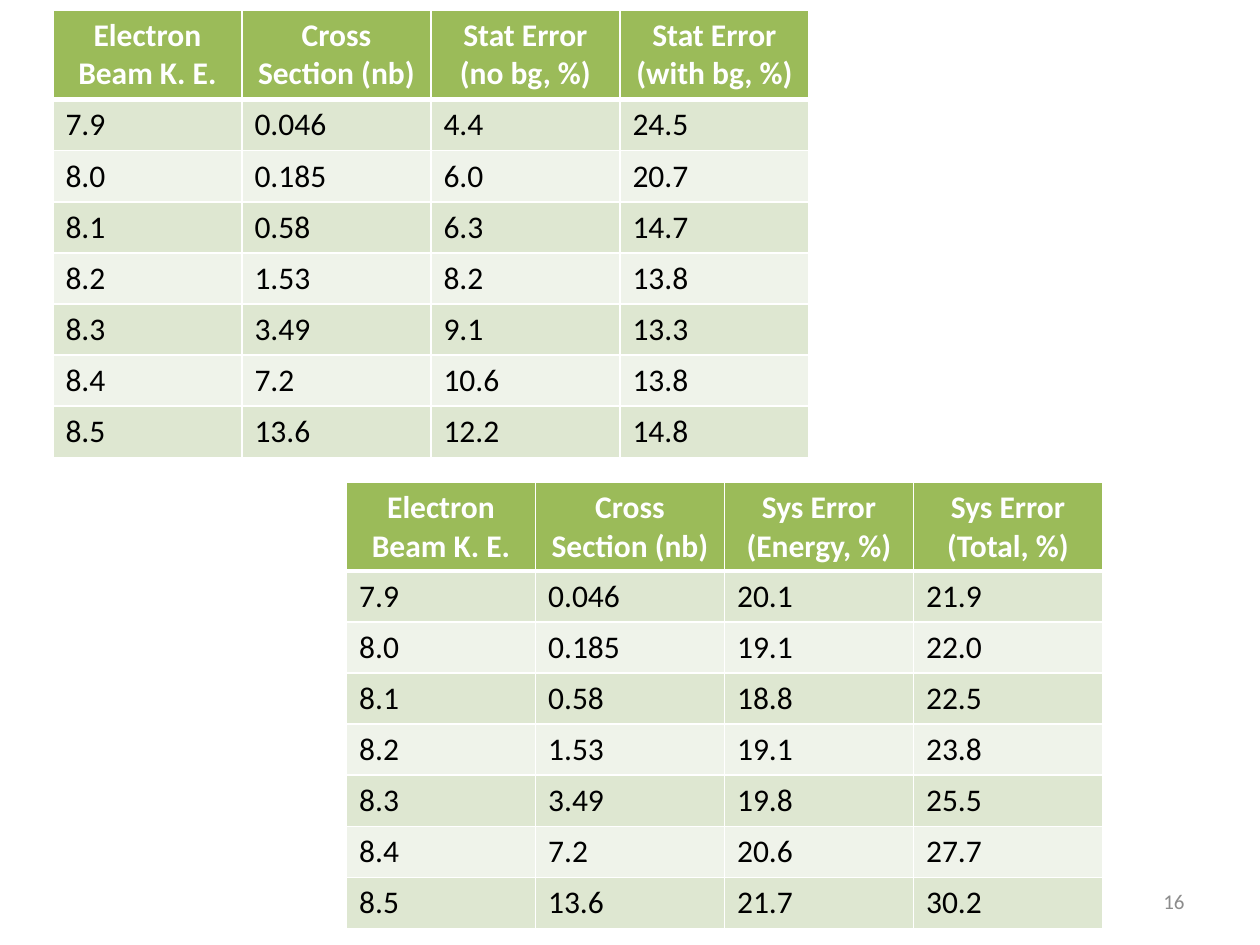
from dataclasses import dataclass

from lxml.etree import SubElement
from pptx import Presentation
from pptx.dml.color import RGBColor
from pptx.enum.text import MSO_ANCHOR, PP_ALIGN
from pptx.oxml.ns import qn
from pptx.util import Inches, Pt


@dataclass(frozen=True)
class Theme:
    font: str = "Calibri"
    table_size: int = 18
    number_size: int = 12
    header: str = "9BBB59"
    bands: tuple = ("DEE7D1", "EFF3EA")
    white: str = "FFFFFF"
    black: str = "000000"
    grey: str = "8C8C8C"
    grid_line: int = 1
    header_line: int = 3


THEME = Theme()
HEADER_HEIGHT = Inches(0.7)

ENERGIES = ["7.9", "8.0", "8.1", "8.2", "8.3", "8.4", "8.5"]
CROSS_SECTIONS = ["0.046", "0.185", "0.58", "1.53", "3.49", "7.2", "13.6"]
SHARED_COLUMNS = {
    "Electron\nBeam K. E.": ENERGIES,
    "Cross Section (nb)": CROSS_SECTIONS,
}
STAT_ERRORS = {
    "Stat Error\n(no bg, %)": ["4.4", "6.0", "6.3", "8.2", "9.1", "10.6", "12.2"],
    "Stat Error\n(with bg, %)": ["24.5", "20.7", "14.7", "13.8", "13.3", "13.8", "14.8"],
}
SYS_ERRORS = {
    "Sys Error\n(Energy, %)": ["20.1", "19.1", "18.8", "19.1", "19.8", "20.6", "21.7"],
    "Sys Error\n(Total, %)": ["21.9", "22.0", "22.5", "23.8", "25.5", "27.7", "30.2"],
}


def style_text(text_frame, size, color, align, bold=False):
    for paragraph in text_frame.paragraphs:
        paragraph.alignment = align
        for run in paragraph.runs:
            run.font.name = THEME.font
            run.font.size = Pt(size)
            run.font.bold = bold
            run.font.color.rgb = RGBColor.from_string(color)


def set_borders(cell, top, bottom):
    """Draw white cell borders; the widths are in points."""
    properties = cell._tc.get_or_add_tcPr()
    widths = {"L": THEME.grid_line, "R": THEME.grid_line, "T": top, "B": bottom}
    for side, width in widths.items():
        line = SubElement(properties, qn(f"a:ln{side}"), w=str(Pt(width)))
        fill = SubElement(line, qn("a:solidFill"))
        SubElement(fill, qn("a:srgbClr"), val=THEME.white)


def style_cell(cell, row):
    is_header = row == 0
    set_borders(
        cell,
        top=THEME.header_line if row == 1 else THEME.grid_line,
        bottom=THEME.header_line if is_header else THEME.grid_line,
    )
    cell.fill.solid()
    background = THEME.header if is_header else THEME.bands[(row - 1) % 2]
    cell.fill.fore_color.rgb = RGBColor.from_string(background)
    style_text(
        cell.text_frame,
        THEME.table_size,
        THEME.white if is_header else THEME.black,
        PP_ALIGN.CENTER if is_header else PP_ALIGN.LEFT,
        bold=is_header,
    )


def add_error_table(slide, box, error_columns):
    columns = SHARED_COLUMNS | error_columns
    rows = [list(columns), *zip(*columns.values())]
    table = slide.shapes.add_table(len(rows), len(columns), *box).table
    body_height = (box[3] - HEADER_HEIGHT) // (len(rows) - 1)
    for r, values in enumerate(rows):
        table.rows[r].height = body_height if r else HEADER_HEIGHT
        for c, value in enumerate(values):
            cell = table.cell(r, c)
            cell.text_frame.text = value
            style_cell(cell, r)


def add_slide_number(slide, box, number):
    text_frame = slide.shapes.add_textbox(*box).text_frame
    text_frame.word_wrap = True
    text_frame.vertical_anchor = MSO_ANCHOR.MIDDLE
    text_frame.text = number
    style_text(text_frame, THEME.number_size, THEME.grey, PP_ALIGN.RIGHT)


def inch_box(*lengths):
    return tuple(Inches(length) for length in lengths)


def main():
    prs = Presentation()
    prs.slide_width, prs.slide_height = inch_box(10, 7.5)
    slide = prs.slides.add_slide(prs.slide_layouts[6])
    add_error_table(slide, inch_box(0.42, 0.08, 6, 3.54), STAT_ERRORS)
    add_slide_number(slide, inch_box(7.17, 6.95, 2.33, 0.4), "16")
    add_error_table(slide, inch_box(2.75, 3.83, 6, 3.54), SYS_ERRORS)
    prs.save("out.pptx")


if __name__ == "__main__":
    main()
